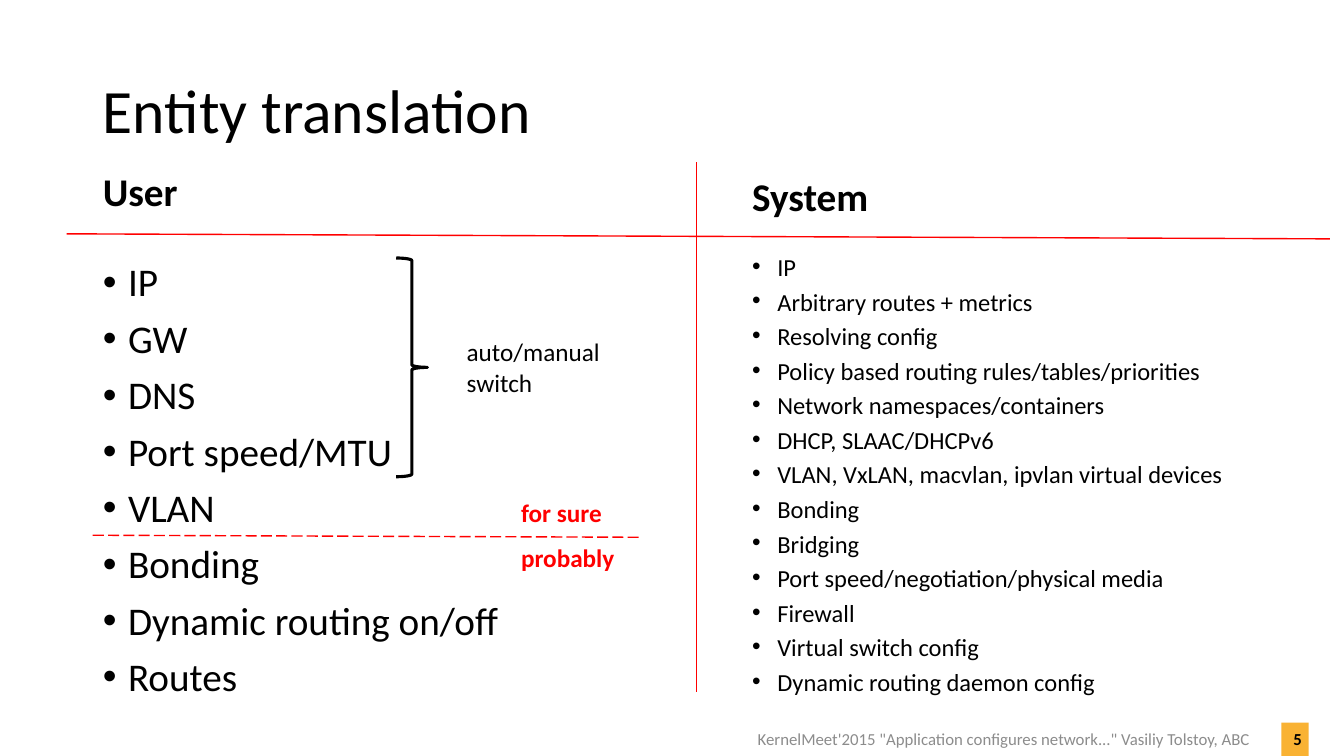
from pptx import Presentation
from pptx.util import Inches, Pt
from pptx.dml.color import RGBColor
from pptx.enum.dml import MSO_LINE as Dash
from pptx.enum.shapes import MSO_CONNECTOR as Conn, MSO_SHAPE as Shape
from pptx.enum.text import MSO_ANCHOR as Anchor, MSO_AUTO_SIZE as Fit, PP_ALIGN as Align
from pptx.oxml.ns import qn
from lxml.etree import SubElement

BLACK, RED, GRAY, AMBER = "000000", "FF0000", "8C8C8C", "F9B233"
USER = ["IP", "GW", "DNS", "Port speed/MTU", "VLAN", "Bonding",
        "Dynamic routing on/off", "Routes"]
SYSTEM = ["IP", "Arbitrary routes + metrics", "Resolving config",
          "Policy based routing rules/tables/priorities",
          "Network namespaces/containers", "DHCP, SLAAC/DHCPv6",
          "VLAN, VxLAN, macvlan, ipvlan virtual devices", "Bonding", "Bridging",
          "Port speed/negotiation/physical media", "Firewall",
          "Virtual switch config", "Dynamic routing daemon config"]
FOOTER = "KernelMeet'2015 \"Application configures network...\" Vasiliy Tolstoy, ABC"


def rgb(code):
    return RGBColor.from_string(code)


def place(shape, box):
    shape.left, shape.top, shape.width, shape.height = map(Inches, box)


def write(shape, lines, size, color=BLACK, bold=False, align=Align.LEFT,
          anchor=Anchor.TOP, space=1.0, before=0):
    frame = shape.text_frame
    frame.text = "\n".join(lines)
    frame.word_wrap = True
    frame.auto_size = Fit.NONE
    frame.vertical_anchor = anchor
    for para in frame.paragraphs:
        para.alignment = align
        para.line_spacing = space
        para.space_before = Pt(before)
        for run in para.runs:
            font = run.font
            font.name, font.size, font.bold = "Calibri", Pt(size), bold
            font.color.rgb = rgb(color)


def add_text(slide, box, lines, size, **style):
    shape = slide.shapes.add_textbox(*map(Inches, box))
    write(shape, lines, size, **style)


def add_list(shape, box, items, size, space):
    place(shape, box)
    write(shape, items, size, space=space, before=10)
    indent = Inches(0.25)
    for para in shape.text_frame.paragraphs:
        props = para._p.get_or_add_pPr()
        props.set("marL", str(indent))
        props.set("indent", str(-indent))
        SubElement(props, qn("a:buFont")).set("typeface", "Arial")
        SubElement(props, qn("a:buChar")).set("char", "•")


def add_head(shape, box, label):
    place(shape, box)
    write(shape, [label], 28, bold=True)


def add_rule(slide, ends, dash=None):
    rule = slide.shapes.add_connector(Conn.STRAIGHT, *map(Inches, ends))
    rule.line.color.rgb = rgb(RED)
    rule.line.width = Pt(1)
    if dash:
        rule.line.dash_style = dash
    SubElement(rule._element.spPr, qn("a:effectLst"))


def add_badge(slide, box):
    badge = slide.shapes.add_shape(Shape.RECTANGLE, *map(Inches, box))
    badge.shadow.inherit = False
    badge.fill.solid()
    badge.fill.fore_color.rgb = rgb(AMBER)
    badge.line.fill.background()


def add_brace(slide, box):
    brace = slide.shapes.add_shape(Shape.RIGHT_BRACE, *map(Inches, box))
    brace.shadow.inherit = False
    brace.fill.background()
    brace.line.color.rgb = rgb(BLACK)
    brace.line.width = Pt(2.25)


def main():
    deck = Presentation()
    deck.slide_width, deck.slide_height = Inches(13.33), Inches(7.5)
    slide = deck.slides.add_slide(deck.slide_layouts.get_by_name("Comparison"))
    title, left_head, left_list, right_head, right_list = slide.placeholders

    place(title, (0.92, 0.4, 11.5, 1.45))
    write(title, ["Entity translation"], 44, anchor=Anchor.MIDDLE, space=0.9)
    add_head(left_head, (0.92, 1.61, 1.69, 0.57), "User")
    add_head(right_head, (7.36, 1.66, 1.69, 0.57), "System")
    add_list(left_list, (0.92, 2.56, 5.28, 4.51), USER, 28, 0.9)
    add_list(right_list, (7.36, 2.53, 5.38, 4.58), SYSTEM, 17.5, 0.7)

    add_brace(slide, (3.93, 2.56, 0.31, 2.17))
    add_text(slide, (4.53, 3.29, 2.51, 0.71), ["auto/manual", "switch"], 18)
    for top, label in ((4.88, "for sure"), (5.33, "probably")):
        add_text(slide, (5.07, top, 1.75, 0.4), [label], 18, color=RED, bold=True)

    add_rule(slide, (0.66, 2.32, 13.19, 2.37))
    add_rule(slide, (6.91, 1.61, 6.91, 6.87))
    add_rule(slide, (0.92, 5.31, 6.34, 5.33), Dash.LONG_DASH)

    add_badge(slide, (12.71, 7.17, 0.27, 0.33))
    foot = {"align": Align.RIGHT, "anchor": Anchor.MIDDLE}
    add_text(slide, (12.53, 7.16, 0.48, 0.34), ["5"], 12, bold=True, **foot)
    add_text(slide, (4.57, 7.16, 7.93, 0.34), [FOOTER], 12, color=GRAY, **foot)
    deck.save("out.pptx")


if __name__ == "__main__":
    main()
